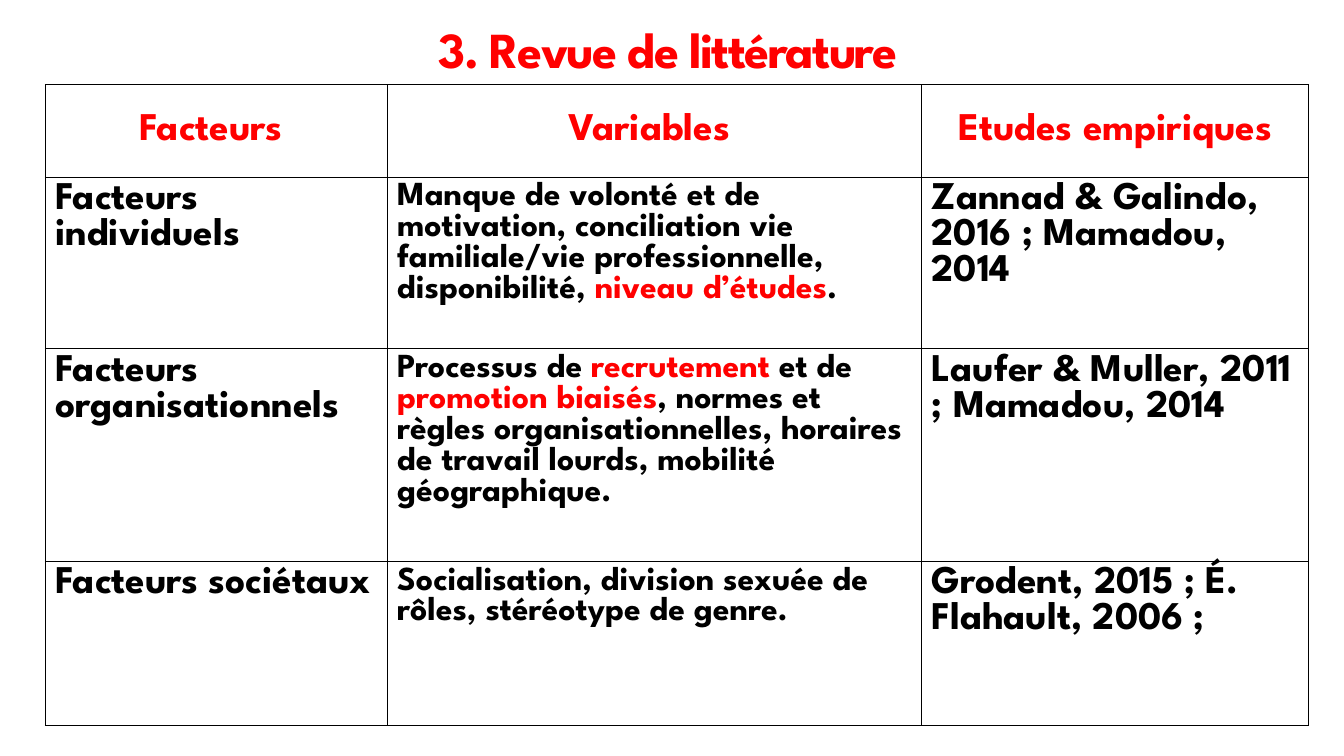
from dataclasses import dataclass

import pptx
import pptx.dml.color
import pptx.enum.text
import pptx.oxml
import pptx.oxml.ns
import pptx.util
from pptx.util import Inches

COLORS = {"accent": "FF0000", "body": "000000", "border": "000000"}
FONT = "League Spartan"
BORDER_POINTS = 1
COLUMN_WIDTHS = (3.39, 5.3, 3.84)
ROW_HEIGHTS = (0.92, 1.63, 2.11, 1.63)
HEADERS = ("Facteurs ", "Variables ", "Etudes empiriques")


@dataclass(frozen=True)
class Part:
    text: str
    color: str = "body"


@dataclass(frozen=True)
class Factor:
    name: str
    variables: tuple[Part, ...]
    studies: str


FACTORS = (
    Factor(
        "Facteurs individuels",
        (
            Part("Manque de volonté et de motivation, conciliation vie "
                 "familiale/vie professionnelle, disponibilité, "),
            Part("niveau d’études", "accent"),
            Part("."),
        ),
        "Zannad & Galindo, 2016 ; Mamadou, 2014",
    ),
    Factor(
        "Facteurs organisationnels",
        (
            Part("Processus de "),
            Part("recrutement", "accent"),
            Part(" et de "),
            Part("promotion biaisés", "accent"),
            Part(", normes et règles organisationnelles, horaires de travail "
                 "lourds, mobilité géographique."),
        ),
        "Laufer & Muller, 2011 ; Mamadou, 2014",
    ),
    Factor(
        "Facteurs sociétaux",
        (Part("Socialisation, division sexuée de rôles, stéréotype de genre."),),
        "Grodent, 2015 ; É. Flahault, 2006 ;",
    ),
)


def write_parts(paragraph, parts: tuple[Part, ...], size: int) -> None:
    for part in parts:
        run = paragraph.add_run()
        run.text = part.text
        run.font.name = FONT
        run.font.size = pptx.util.Pt(size)
        run.font.bold = True
        run.font.color.rgb = pptx.dml.color.RGBColor.from_string(COLORS[part.color])


def add_borders(cell) -> None:
    properties = cell._tc.get_or_add_tcPr()
    for position, side in enumerate(("lnL", "lnR", "lnT", "lnB")):
        line = pptx.oxml.parse_xml(
            f'<a:{side} {pptx.oxml.ns.nsdecls("a")} w="{pptx.util.Pt(BORDER_POINTS)}">'
            f'<a:solidFill><a:srgbClr val="{COLORS["border"]}"/></a:solidFill>'
            f"</a:{side}>"
        )
        properties.insert(position, line)


def fill_cell(cell, parts: tuple[Part, ...], size: int, centered: bool = False) -> None:
    paragraph = cell.text_frame.paragraphs[0]
    write_parts(paragraph, parts, size)
    if centered:
        paragraph.alignment = pptx.enum.text.PP_ALIGN.CENTER
        cell.vertical_anchor = pptx.enum.text.MSO_ANCHOR.MIDDLE
    cell.fill.background()
    add_borders(cell)


def add_title(slide) -> None:
    title = slide.shapes.add_textbox(Inches(2.21), Inches(0.21), Inches(8.84), Inches(0.63))
    text_frame = title.text_frame
    text_frame.word_wrap = True
    text_frame.vertical_anchor = pptx.enum.text.MSO_ANCHOR.MIDDLE
    paragraph = text_frame.paragraphs[0]
    paragraph.alignment = pptx.enum.text.PP_ALIGN.CENTER
    paragraph.line_spacing = 0.85
    write_parts(paragraph, (Part("3. Revue de littérature", "accent"),), 36)
    # Tightened letter spacing, in hundredths of a point
    paragraph.runs[0].font._element.set("spc", "-120")


def add_factor_table(slide) -> None:
    table = slide.shapes.add_table(
        len(ROW_HEIGHTS), len(COLUMN_WIDTHS), Inches(0.45), Inches(0.84),
        Inches(sum(COLUMN_WIDTHS)), Inches(sum(ROW_HEIGHTS)),
    ).table
    table.first_row = False
    table.horz_banding = False
    for column, width in zip(table.columns, COLUMN_WIDTHS):
        column.width = Inches(width)
    for row, height in zip(table.rows, ROW_HEIGHTS):
        row.height = Inches(height)

    # Header row
    for column_index, header in enumerate(HEADERS):
        fill_cell(table.cell(0, column_index), (Part(header, "accent"),), 28, centered=True)

    # One row per group of factors
    for row_index, factor in enumerate(FACTORS, start=1):
        fill_cell(table.cell(row_index, 0), (Part(factor.name),), 28)
        fill_cell(table.cell(row_index, 1), factor.variables, 24)
        fill_cell(table.cell(row_index, 2), (Part(factor.studies),), 28)


def main() -> None:
    presentation = pptx.Presentation()
    presentation.slide_width = Inches(13.33)
    presentation.slide_height = Inches(7.5)
    slide = presentation.slides.add_slide(presentation.slide_layouts[6])
    add_title(slide)
    add_factor_table(slide)
    presentation.save("out.pptx")


if __name__ == "__main__":
    main()
